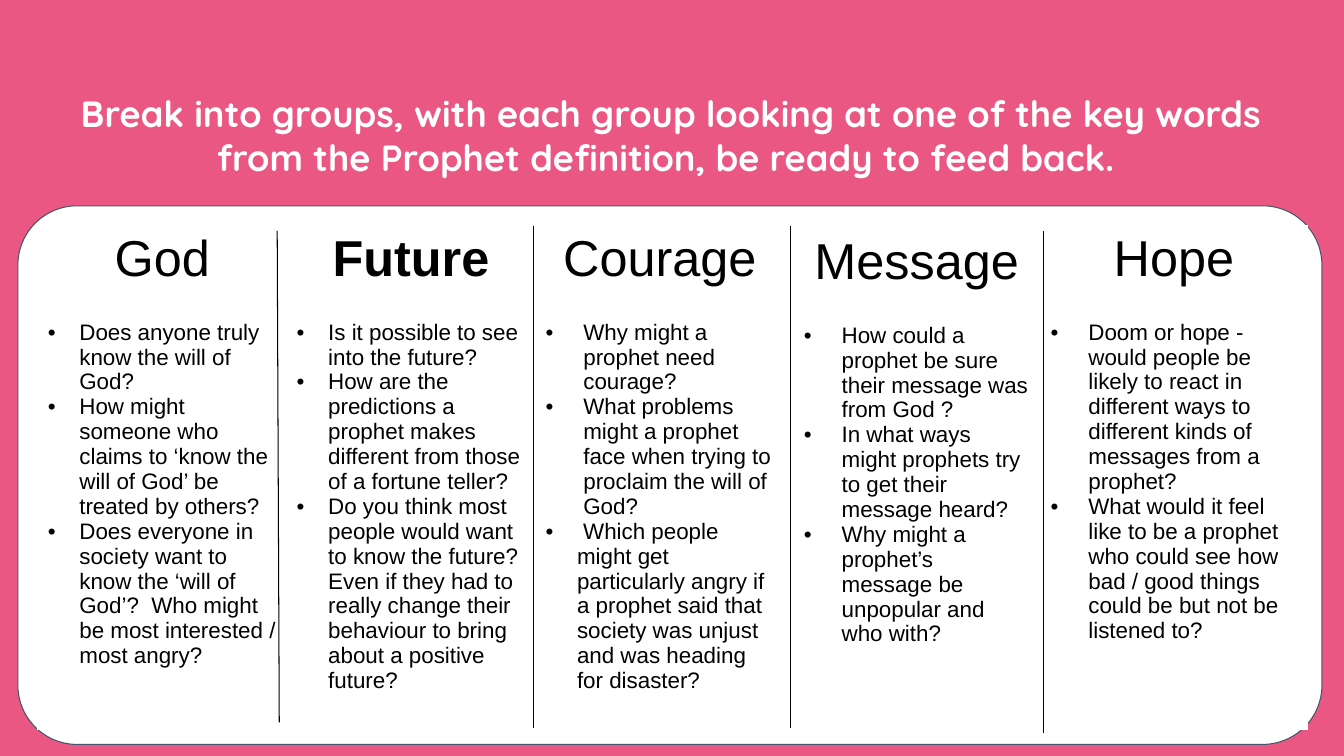
from lxml import etree
from pptx import Presentation
from pptx import util as u
from pptx.dml.color import RGBColor
from pptx.enum import shapes, text
from pptx.oxml import ns

PINK = RGBColor(0xEA, 0x57, 0x83)
WHITE = RGBColor(0xFF, 0xFF, 0xFF)
BLACK = RGBColor(0, 0, 0)
SLATE = RGBColor(0x44, 0x54, 0x6A)

NARROW, WIDE = 30, 36
TITLE = ("Break into groups, with each group looking at one of the key words "
         "from the Prophet definition, be ready to feed back. ")
GOD = ("God", [
    ("Does anyone truly know the will of God?", NARROW),
    ("How might someone who claims to ‘know the will of God’ be treated by others?", NARROW),
    ("Does everyone in society want to know the ‘will of God’?  "
     "Who might be most interested / most angry?", NARROW),
])
FUTURE = ("Future", [
    ("Is it possible to see into the future?", NARROW),
    ("How are the predictions a prophet makes different from those of a fortune teller?", NARROW),
    ("Do you think most people would want to know the future? Even if they had to "
     "really change their behaviour to bring about a positive future?", NARROW),
])
COURAGE = ("Courage", [
    ("Why might a prophet need courage?", WIDE),
    ("What problems might a prophet face when trying to proclaim the will of God?", WIDE),
    (" Which people might get particularly angry if a prophet said that society "
     "was unjust and was heading for disaster?", NARROW),
])
MESSAGE = ("Message", [
    ("How could a prophet be sure their message was from God ?", WIDE),
    ("In what ways might prophets try to get their message heard?", WIDE),
    ("Why might a prophet’s message be unpopular and who with?", WIDE),
])
HOPE = ("Hope", [
    ("Doom or hope - would people be likely to react in different ways to "
     "different kinds of messages from a prophet?", WIDE),
    ("What would it feel like to be a prophet who could see how bad / good things "
     "could be but not be listened to?", WIDE),
])
TABLES = [
    (36, 215, 237, [GOD, FUTURE, COURAGE]),
    (756, 218, 234, [MESSAGE]),
    (991, 215, 254, [HOPE]),
]
DIVIDERS = [(264, 220, 266, 688), (508, 215, 508, 693),
            (753, 215, 753, 693), (994, 220, 994, 698)]


def px(length):
    """Turn whole px into EMU."""
    return u.Emu(length * 9525)


def write(para, words, size, color=BLACK, bold=False, font="Arial",
          align=text.PP_ALIGN.LEFT, indent=0):
    """Write one formatted paragraph, bulleted when it has an indent."""
    para.alignment = align
    if indent:
        props = para._p.get_or_add_pPr()
        props.set("marL", str(px(indent)))
        props.set("indent", str(-px(indent)))
        tint = etree.SubElement(props, ns.qn("a:buClr"))
        etree.SubElement(tint, ns.qn("a:srgbClr"), val=str(BLACK))
        etree.SubElement(props, ns.qn("a:buFont"), typeface="Arial")
        etree.SubElement(props, ns.qn("a:buChar"), char="•")
    span = para.add_run()
    span.text = words
    span.font.name = font
    span.font.size = u.Pt(size)
    span.font.bold = bold
    span.font.color.rgb = color


class Board:
    """Hold the style and the current slide."""

    row_heights = (85, 395)
    line_width = u.Pt(0.75)

    def __init__(self, page):
        """Start on a pink page."""
        self.page = page
        page.background.fill.solid()
        page.background.fill.fore_color.rgb = PINK

    def title(self, words, left, top, width, height):
        """Place and format the title placeholder."""
        box = self.page.shapes.title
        box.left, box.top, box.width, box.height = map(px, (left, top, width, height))
        frame = box.text_frame
        frame.word_wrap = True
        frame.auto_size = text.MSO_AUTO_SIZE.SHAPE_TO_FIT_TEXT
        frame.vertical_anchor = text.MSO_ANCHOR.TOP
        write(frame.paragraphs[0], words, 26, WHITE, True, "Quicksand",
              text.PP_ALIGN.CENTER)

    def panel(self, left, top, width, height):
        """Draw the rounded white panel."""
        panel = self.page.shapes.add_shape(
            shapes.MSO_SHAPE.ROUNDED_RECTANGLE, *map(px, (left, top, width, height)))
        panel.adjustments[0] = 0.11
        panel.shadow.inherit = False
        panel.fill.solid()
        panel.fill.fore_color.rgb = WHITE
        panel.line.color.rgb = SLATE
        panel.line.width = self.line_width

    def table(self, left, top, column_width, topics):
        """Add a table with one key word and its questions per column."""
        width = column_width * len(topics)
        grid = self.page.shapes.add_table(
            2, len(topics), *map(px, (left, top, width, sum(self.row_heights)))).table
        for row, height in zip(grid.rows, self.row_heights):
            row.height = px(height)
        for cell in grid.iter_cells():
            cell.fill.solid()
            cell.fill.fore_color.rgb = WHITE
        for column, (word, questions) in enumerate(topics):
            grid.columns[column].width = px(column_width)
            write(grid.cell(0, column).text_frame.paragraphs[0], word, 36,
                  bold=word == "Future", align=text.PP_ALIGN.CENTER)
            frame = grid.cell(1, column).text_frame
            for number, (question, indent) in enumerate(questions):
                para = frame.add_paragraph() if number else frame.paragraphs[0]
                write(para, question, 16, indent=indent)

    def divider(self, *ends):
        """Draw a thin line between two columns."""
        line = self.page.shapes.add_connector(
            shapes.MSO_CONNECTOR.STRAIGHT, *map(px, ends))
        line.line.color.rgb = BLACK
        line.line.width = self.line_width
        etree.SubElement(line._element.spPr, ns.qn("a:effectLst"))


def main():
    """Build and save the slide."""
    deck = Presentation()
    deck.slide_width, deck.slide_height = px(1280), px(720)
    board = Board(deck.slides.add_slide(deck.slide_layouts[5]))
    board.title(TITLE, 45, 82, 1189, 115)
    board.panel(17, 196, 1242, 513)
    for table in TABLES:
        board.table(*table)
    for ends in DIVIDERS:
        board.divider(*ends)
    deck.save("out.pptx")


if __name__ == "__main__":
    main()
